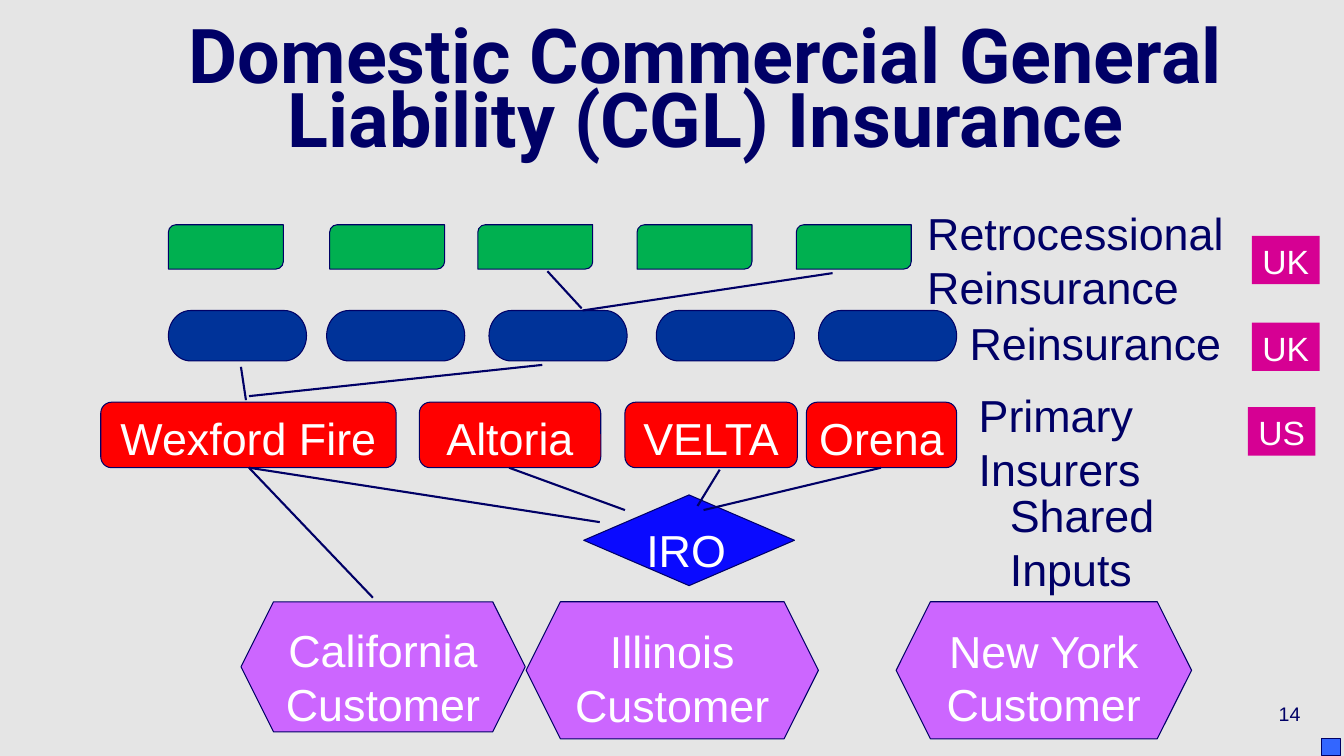
from dataclasses import dataclass

from lxml.etree import SubElement
from pptx import Presentation
from pptx.dml.color import RGBColor
from pptx.enum.shapes import MSO_CONNECTOR, MSO_SHAPE as Shape
from pptx.enum.text import MSO_ANCHOR as Anchor, PP_ALIGN as Align
from pptx.oxml.ns import qn
from pptx.util import Emu, Inches, Pt


@dataclass(frozen=True)
class Theme:
    background: str = "E5E5E5"
    ink: str = "000066"
    white: str = "FFFFFF"
    retro: str = "00B050"
    reinsurer: str = "003399"
    insurer: str = "FF0000"
    shared: str = "0A0AFF"
    customer: str = "CC66FF"
    country: str = "D60093"
    corner: str = "3366FF"
    title_font: str = "Roboto"
    body_font: str = "Arial"
    title_size: float = 54
    body_size: float = 32
    country_size: float = 24
    number_size: float = 14
    outline: float = 0.75
    link: float = 1.5


T = Theme()


@dataclass(frozen=True)
class Box:
    """Left, top, width and height in hundredths of the slide."""
    x: float
    y: float
    w: float
    h: float


@dataclass(frozen=True)
class Style:
    size: float
    color: str
    font: str = T.body_font
    bold: bool = False
    align: Align = Align.LEFT
    anchor: Anchor = Anchor.TOP
    spacing: float = 1.0
    side: float = 0.1


@dataclass(frozen=True)
class Node:
    box: Box
    kind: Shape
    fill: str
    text: str = ""
    style: Style | None = None
    outlined: bool = True


@dataclass(frozen=True)
class Label:
    box: Box
    text: str
    style: Style


@dataclass(frozen=True)
class Link:
    x1: float
    y1: float
    x2: float
    y2: float


TITLE = Style(T.title_size, T.ink, T.title_font, True, Align.CENTER, Anchor.MIDDLE, 0.7)
NUMBER = Style(T.number_size, T.ink, align=Align.RIGHT, anchor=Anchor.MIDDLE)
LEVEL = Style(T.body_size, T.ink)
NAME = Style(T.body_size, T.white, align=Align.CENTER, side=0.05)
SHARED = Style(T.body_size, T.white)
COUNTRY = Style(T.country_size, T.white, align=Align.CENTER, side=0.05)

# Tiers of the market, from the top down
RETRO = [Node(Box(x, 29.73, 8.55, 5.87), Shape.ROUND_2_DIAG_RECTANGLE, T.retro)
         for x in (12.53, 24.53, 35.55, 47.4, 59.25)]
REINSURERS = [Node(Box(x, 41.07, 10.28, 6.67), Shape.FLOWCHART_TERMINATOR, T.reinsurer)
              for x in (12.53, 24.3, 36.38, 48.83, 60.9)]
INSURERS = [Node(Box(x, 53.2, w, 8.67), Shape.FLOWCHART_ALTERNATE_PROCESS,
                 T.insurer, name, NAME)
            for x, w, name in ((7.5, 21.98, "Wexford Fire"), (31.2, 13.5, "Altoria"),
                               (46.5, 12.83, "VELTA"), (60, 11.18, "Orena"))]
SHARED_INPUT = Node(Box(43.43, 65.47, 15.68, 12), Shape.DIAMOND, T.shared, "IRO", SHARED)
CUSTOMERS = [Node(Box(x, 79.6, w, h), Shape.HEXAGON, T.customer, f"{state} Customer", NAME)
             for x, w, h, state in ((17.93, 21.15, 17.2, "California"),
                                    (39.15, 21.75, 18.13, "Illinois"),
                                    (66.68, 21.98, 18.13, "New York"))]
COUNTRIES = [Node(Box(x, y, 5.03, 6.4), Shape.RECTANGLE, T.country, code, COUNTRY, False)
             for x, y, code in ((93.15, 31.2, "UK"), (93.15, 42.67, "UK"),
                                (92.85, 53.87, "US"))]
CORNER = Node(Box(98.33, 97.73, 1.43, 2.27), Shape.RECTANGLE, T.corner)
NODES = [*CUSTOMERS, *RETRO, *REINSURERS, *INSURERS, SHARED_INPUT, *COUNTRIES, CORNER]

LABELS = [
    Label(Box(6.68, 4.4, 91.65, 16.67),
          "Domestic Commercial General Liability (CGL) Insurance", TITLE),
    Label(Box(76.65, 91.07, 20.85, 6.67), "14", NUMBER),
    Label(Box(68.25, 26.53, 23.85, 10.93), "Retrocessional Reinsurance", LEVEL),
    Label(Box(71.4, 41.07, 20.7, 6.4), "Reinsurance", LEVEL),
    Label(Box(72.08, 50.67, 17.25, 12.8), "Primary Insurers", LEVEL),
    Label(Box(74.4, 63.87, 13.2, 12.8), "Shared Inputs", LEVEL),
]

LINKS = [
    # Insurers to the shared input
    Link(18.53, 61.87, 44.63, 69.07),
    Link(37.88, 61.87, 46.5, 67.47),
    Link(53.55, 62.13, 51.9, 66.93),
    Link(65.55, 61.87, 52.35, 67.47),
    # Insurer to customer
    Link(18.53, 61.87, 27.75, 79.07),
    # Insurer to reinsurers
    Link(18.3, 52.93, 17.93, 48.53),
    Link(18.53, 52.4, 40.35, 48.27),
    # Reinsurer to retrocessional reinsurers
    Link(43.35, 41.07, 61.95, 36.13),
    Link(43.28, 40.8, 40.73, 35.87),
]

prs = Presentation()
prs.slide_width, prs.slide_height = Inches(13.33), Inches(7.5)
slide = prs.slides.add_slide(prs.slide_layouts[6])


def rgb(color: str) -> RGBColor:
    return RGBColor.from_string(color)


def col(share: float) -> Emu:
    return Emu(round(prs.slide_width * share / 100))


def row(share: float) -> Emu:
    return Emu(round(prs.slide_height * share / 100))


def place(box: Box) -> tuple[Emu, Emu, Emu, Emu]:
    return col(box.x), row(box.y), col(box.w), row(box.h)


def write(sp, text: str, style: Style) -> None:
    tf = sp.text_frame
    tf.word_wrap = True
    tf.vertical_anchor = style.anchor
    tf.margin_left = tf.margin_right = Inches(style.side)
    tf.margin_top = tf.margin_bottom = Inches(0.05)
    p = tf.paragraphs[0]
    p.text = text
    p.alignment, p.line_spacing = style.align, style.spacing
    p.font.name, p.font.size, p.font.bold = style.font, Pt(style.size), style.bold
    p.font.color.rgb = rgb(style.color)


def draw_node(node: Node) -> None:
    sp = slide.shapes.add_shape(node.kind, *place(node.box))
    sp.shadow.inherit = False
    sp.fill.solid()
    sp.fill.fore_color.rgb = rgb(node.fill)
    if node.outlined:
        sp.line.color.rgb, sp.line.width = rgb(T.ink), Pt(T.outline)
    else:
        sp.line.fill.background()
    if node.style:
        write(sp, node.text, node.style)


def draw_label(label: Label) -> None:
    write(slide.shapes.add_textbox(*place(label.box)), label.text, label.style)


def draw_link(link: Link) -> None:
    line = slide.shapes.add_connector(MSO_CONNECTOR.STRAIGHT, col(link.x1), row(link.y1),
                                      col(link.x2), row(link.y2))
    line.line.color.rgb, line.line.width = rgb(T.ink), Pt(T.link)
    SubElement(line._element.spPr, qn("a:effectLst"))


def main() -> None:
    slide.background.fill.solid()
    slide.background.fill.fore_color.rgb = rgb(T.background)
    for node in NODES:
        draw_node(node)
    for label in LABELS:
        draw_label(label)
    for link in LINKS:
        draw_link(link)
    prs.save("out.pptx")


if __name__ == "__main__":
    main()
